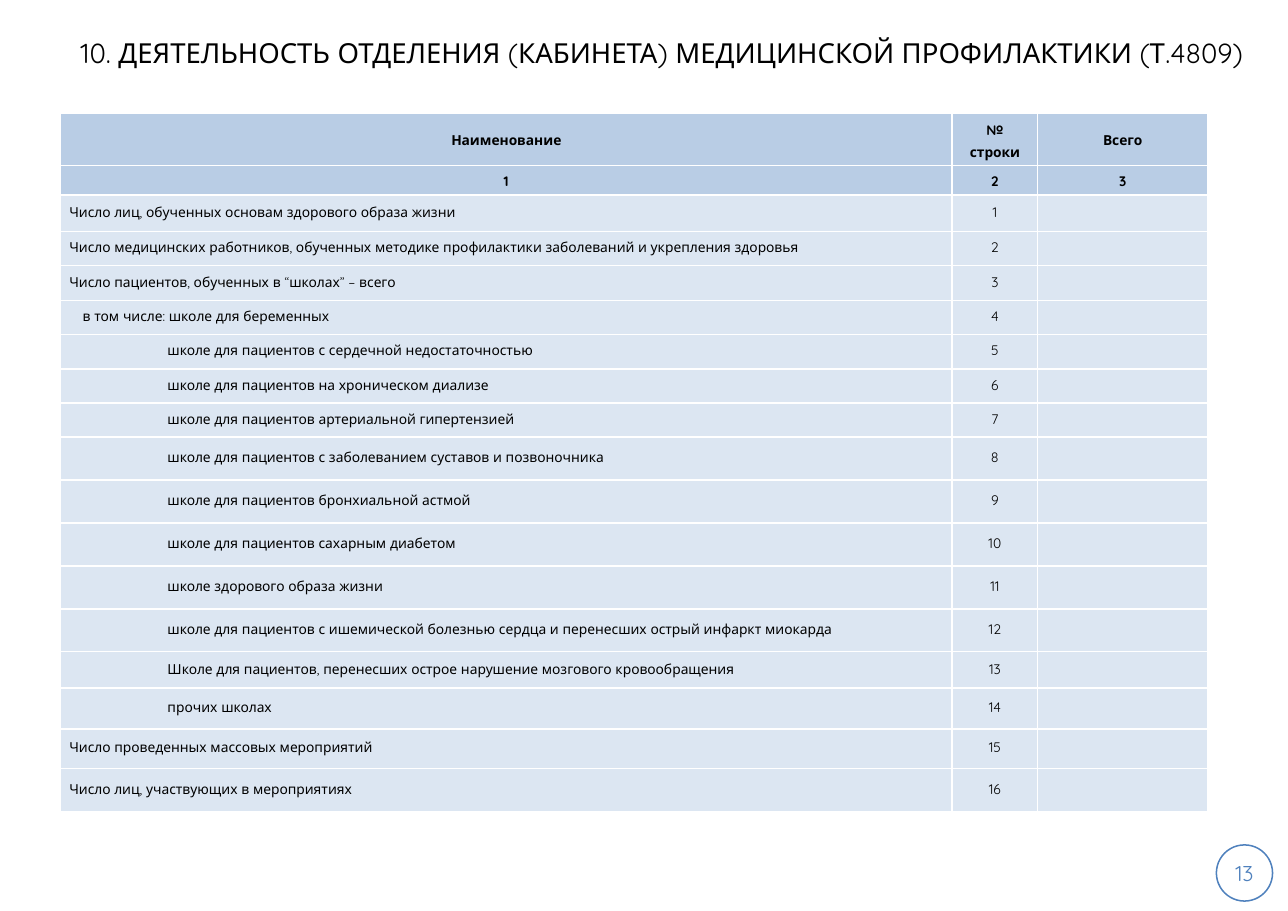
from lxml import etree
from pptx import Presentation
from pptx.dml.color import RGBColor
from pptx.enum.shapes import MSO_SHAPE
from pptx.enum.text import MSO_ANCHOR, PP_ALIGN
from pptx.oxml.ns import qn
from pptx.util import Pt

PX = 9144
SLIDE_SIZE = (1169, 827)
FONT = "Quicksand"
COLORS = {
    "text": "000000",
    "accent": "4F81BD",
    "header": "B9CDE5",
    "body": "DCE6F2",
    "border": "FFFFFF",
}
ELLIPSE = MSO_SHAPE.OVAL
MIDDLE = MSO_ANCHOR.MIDDLE
LEFT, CENTER = PP_ALIGN.LEFT, PP_ALIGN.CENTER

TITLE = "10. ДЕЯТЕЛЬНОСТЬ ОТДЕЛЕНИЯ (КАБИНЕТА) МЕДИЦИНСКОЙ ПРОФИЛАКТИКИ (Т.4809)"
PAGE_NUMBER = "13"
CELL_SIZE = 9
CELL_MARGINS = (8, 4, 8, 4)
COLUMN_WIDTHS = (809, 78, 154)
HEADER_HEIGHTS = (47, 27)
HEADERS = [("Наименование", "№ строки", "Всего"), ("1", "2", "3")]
TOP_LEVEL, INCLUDING, SCHOOL = (0, 0), (12, 0), (12, 77)
INDICATORS = [
    ("Число лиц, обученных основам здорового образа жизни", TOP_LEVEL, 33),
    ("Число медицинских работников, обученных методике профилактики "
     "заболеваний и укрепления здоровья", TOP_LEVEL, 31),
    ("Число пациентов, обученных в “школах” – всего", TOP_LEVEL, 32),
    ("в том числе: школе для беременных", INCLUDING, 31),
    ("школе для пациентов с сердечной недостаточностью", SCHOOL, 31),
    ("школе для пациентов на хроническом диализе", SCHOOL, 31),
    ("школе для пациентов артериальной гипертензией", SCHOOL, 31),
    ("школе для пациентов с заболеванием суставов и позвоночника", SCHOOL, 39),
    ("школе для пациентов бронхиальной астмой", SCHOOL, 39),
    ("школе для пациентов сахарным диабетом", SCHOOL, 39),
    ("школе здорового образа жизни", SCHOOL, 39),
    ("школе для пациентов с ишемической болезнью сердца и перенесших "
     "острый инфаркт миокарда", SCHOOL, 39),
    ("Школе для пациентов, перенесших острое нарушение мозгового "
     "кровообращения", SCHOOL, 33),
    ("прочих школах", SCHOOL, 37),
    ("Число проведенных массовых мероприятий", TOP_LEVEL, 36),
    ("Число лиц, участвующих в мероприятиях", TOP_LEVEL, 39),
]


def px(*lengths):
    return [length * PX for length in lengths]


def rgb(name):
    return RGBColor.from_string(COLORS[name])


def add_run(paragraph, text, size, color="text", bold=False):
    run = paragraph.add_run()
    run.text = text
    run.font.name = FONT
    run.font.size = Pt(size)
    run.font.bold = bold
    run.font.color.rgb = rgb(color)


def set_margins(holder, margins):
    (holder.margin_left, holder.margin_top,
     holder.margin_right, holder.margin_bottom) = px(*margins)


def add_title(slide):
    frame = slide.shapes.add_textbox(*px(73, 0, 1097, 95)).text_frame
    frame.word_wrap = True
    frame.vertical_anchor = MIDDLE
    set_margins(frame, (0, 5, 10, 5))
    add_run(frame.paragraphs[0], TITLE, 18)


def add_page_number(slide):
    badge = slide.shapes.add_shape(ELLIPSE, *px(1104, 767, 51, 51))
    badge.shadow.inherit = False
    badge.fill.background()
    badge.line.color.rgb = rgb("accent")
    badge.line.width = Pt(1)
    frame = badge.text_frame
    frame.vertical_anchor = MIDDLE
    set_margins(frame, (0, 0, 0, 0))
    frame.paragraphs[0].alignment = CENTER
    add_run(frame.paragraphs[0], PAGE_NUMBER, 14, "accent")


def add_borders(cell):
    properties = cell._tc.get_or_add_tcPr()
    for side in ("a:lnL", "a:lnR", "a:lnT", "a:lnB"):
        border = etree.SubElement(properties, qn(side), w=str(Pt(1)))
        fill = etree.SubElement(border, qn("a:solidFill"))
        etree.SubElement(fill, qn("a:srgbClr"), val=COLORS["border"])


def fill_cell(cell, text, fill, align=CENTER, spacing=Pt(10), bold=False, indents=TOP_LEVEL):
    add_borders(cell)
    cell.fill.solid()
    cell.fill.fore_color.rgb = rgb(fill)
    cell.vertical_anchor = MIDDLE
    set_margins(cell, CELL_MARGINS)
    paragraph = cell.text_frame.paragraphs[0]
    paragraph.alignment = align
    paragraph.line_spacing = spacing
    margin, first_line = px(*indents)
    properties = paragraph._p.get_or_add_pPr()
    properties.set("marL", str(margin))
    properties.set("indent", str(first_line))
    if text:
        add_run(paragraph, text, CELL_SIZE, bold=bold)
    else:
        etree.SubElement(paragraph._p, qn("a:endParaRPr"), sz=str(CELL_SIZE * 100))


def add_indicator_table(slide):
    heights = [*HEADER_HEIGHTS, *(height for _, _, height in INDICATORS)]
    table = slide.shapes.add_table(
        len(heights), len(COLUMN_WIDTHS),
        *px(55, 103, sum(COLUMN_WIDTHS), sum(heights))).table
    table.first_row = False
    table.horz_banding = False
    for column, width in zip(table.columns, px(*COLUMN_WIDTHS)):
        column.width = width
    for row, height in zip(table.rows, px(*heights)):
        row.height = height

    for row, labels in enumerate(HEADERS):
        for column, label in enumerate(labels):
            spacing = Pt(14) if (row, column) == (0, 1) else 1.15
            fill_cell(table.cell(row, column), label, "header", spacing=spacing, bold=True)

    for number, (name, indents, _) in enumerate(INDICATORS, 1):
        row = number + len(HEADERS) - 1
        fill_cell(table.cell(row, 0), name, "body", LEFT, indents=indents)
        fill_cell(table.cell(row, 1), str(number), "body")
        fill_cell(table.cell(row, 2), "", "body")


def main():
    presentation = Presentation()
    presentation.slide_width, presentation.slide_height = px(*SLIDE_SIZE)
    slide = presentation.slides.add_slide(presentation.slide_layouts[6])
    add_page_number(slide)
    add_title(slide)
    add_indicator_table(slide)
    presentation.save("out.pptx")


if __name__ == "__main__":
    main()
